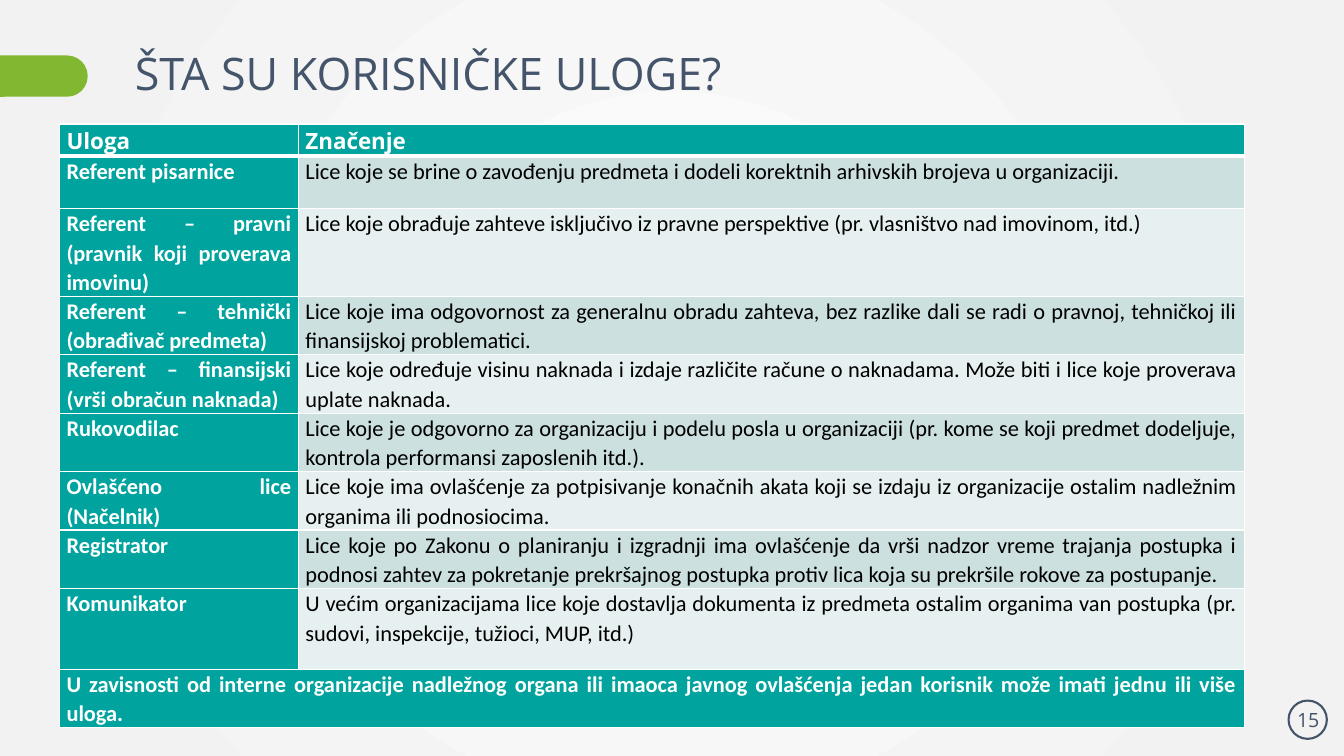
"""Builds the slide that explains the user roles in a table."""
from lxml.etree import SubElement
from pptx import Presentation
from pptx.dml.color import RGBColor
from pptx.enum.shapes import MSO_SHAPE
from pptx.enum.text import MSO_ANCHOR, PP_ALIGN
from pptx.oxml import parse_xml
from pptx.oxml.ns import nsdecls, qn
from pptx.util import Inches, Pt

TITLE = "ŠTA SU KORISNIČKE ULOGE?"
PAGE_NUMBER = "15"
HEADER = ("Uloga", "Značenje")
ROLES = [
    ("Referent pisarnice",
     "Lice koje se brine o zavođenju predmeta i dodeli korektnih arhivskih brojeva u organizaciji."),
    ("Referent – pravni (pravnik koji proverava imovinu)",
     "Lice koje obrađuje zahteve isključivo iz pravne perspektive (pr. vlasništvo nad imovinom, itd.)"),
    ("Referent – tehnički (obrađivač predmeta)",
     "Lice koje ima odgovornost za generalnu obradu zahteva, bez razlike dali se radi o pravnoj, "
     "tehničkoj ili finansijskoj problematici."),
    ("Referent – finansijski (vrši obračun naknada)",
     "Lice koje određuje visinu naknada i izdaje različite račune o naknadama. "
     "Može biti i lice koje proverava uplate naknada."),
    ("Rukovodilac",
     "Lice koje je odgovorno za organizaciju i podelu posla u organizaciji (pr. kome se koji predmet "
     "dodeljuje, kontrola performansi zaposlenih itd.)."),
    ("Ovlašćeno lice (Načelnik)",
     "Lice koje ima ovlašćenje za potpisivanje konačnih akata koji se izdaju iz organizacije ostalim "
     "nadležnim organima ili podnosiocima."),
    ("Registrator",
     "Lice koje po Zakonu o planiranju i izgradnji ima ovlašćenje da vrši nadzor vreme trajanja postupka "
     "i podnosi zahtev za pokretanje prekršajnog postupka protiv lica koja su prekršile rokove za postupanje."),
    ("Komunikator",
     "U većim organizacijama lice koje dostavlja dokumenta iz predmeta ostalim organima van postupka "
     "(pr. sudovi, inspekcije, tužioci, MUP, itd.)"),
]
FOOTER = ("U zavisnosti od interne organizacije nadležnog organa ili imaoca javnog ovlašćenja "
          "jedan korisnik može imati jednu ili više uloga.")
COLUMN_WIDTHS = (2.37, 9.38)
TWO_LINES = 0.58
ROW_HEIGHTS = (0.32, 0.52, 0.87, *[TWO_LINES] * 5, 0.8, TWO_LINES)

SLATE = RGBColor(0x44, 0x54, 0x6A)
GREEN = RGBColor(0x82, 0xB7, 0x32)
TEAL = RGBColor(0x00, 0xA3, 0x9E)
BANDS = (RGBColor(0xCC, 0xE0, 0xDF), RGBColor(0xE7, 0xF0, 0xF0))
WHITE = RGBColor(0xFF, 0xFF, 0xFF)
BLACK = RGBColor(0x00, 0x00, 0x00)
GLOW = ((0, RGBColor(0xFC, 0xFC, 0xFC)), (0.93, RGBColor(0xF2, 0xF2, 0xF2)))


def set_background(page):
    fill = page.background.fill
    fill.gradient()
    for stop, (position, color) in zip(fill.gradient_stops, GLOW):
        stop.position = position
        stop.color.rgb = color
    linear = page.element.find(".//" + qn("a:lin"))
    linear.getparent().replace(linear, parse_xml(
        f'<a:path {nsdecls("a")} path="circle">'
        '<a:fillToRect l="50000" t="50000" r="50000" b="50000"/></a:path>'))


def add_shape(page, kind, left, top, width, height):
    shape = page.shapes.add_shape(kind, Inches(left), Inches(top), Inches(width), Inches(height))
    shape.shadow.inherit = False
    return shape


def style(para, size, color, font="Open Sans", bold=False):
    para.font.name = font
    para.font.size = Pt(size)
    para.font.bold = bold
    para.font.color.rgb = color


def add_text(page, text, left, top, width, height, size):
    box = page.shapes.add_textbox(Inches(left), Inches(top), Inches(width), Inches(height))
    box.text_frame.word_wrap = True
    box.text_frame.vertical_anchor = MSO_ANCHOR.MIDDLE
    para = box.text_frame.paragraphs[0]
    para.text = text
    style(para, size, SLATE)
    return para


def add_borders(cell, bottom):
    properties = cell._tc.get_or_add_tcPr()
    for index, side in enumerate("LRTB"):
        width = Pt(bottom if side == "B" else 1)
        line = parse_xml(f'<a:ln{side} {nsdecls("a")} w="{width}"/>')
        SubElement(SubElement(line, qn("a:solidFill")), qn("a:srgbClr"), val=str(WHITE))
        properties.insert(index, line)


def fill_cell(cell, text, fill, color=WHITE, font="Calibri", bottom=1):
    cell.margin_left = cell.margin_right = Inches(0.07)
    cell.margin_top = cell.margin_bottom = 0
    cell.fill.solid()
    cell.fill.fore_color.rgb = fill
    para = cell.text_frame.paragraphs[0]
    para.text = text
    para.alignment = PP_ALIGN.JUSTIFY
    para.line_spacing = 1.07
    style(para, 16, color, font, bold=color == WHITE)
    add_borders(cell, bottom)


def add_roles(page):
    table = page.shapes.add_table(
        len(ROW_HEIGHTS), len(COLUMN_WIDTHS), Inches(0.59), Inches(1.23),
        Inches(sum(COLUMN_WIDTHS)), Inches(sum(ROW_HEIGHTS))).table
    for column, width in zip(table.columns, COLUMN_WIDTHS):
        column.width = Inches(width)
    for row, height in zip(table.rows, ROW_HEIGHTS):
        row.height = Inches(height)
    for index, heading in enumerate(HEADER):
        fill_cell(table.cell(0, index), heading, TEAL, font="Open Sans", bottom=3)
    for index, (role, meaning) in enumerate(ROLES):
        fill_cell(table.cell(index + 1, 0), role, TEAL)
        fill_cell(table.cell(index + 1, 1), meaning, BANDS[index % 2], BLACK)
    last = len(ROW_HEIGHTS) - 1
    table.cell(last, 0).merge(table.cell(last, 1))
    fill_cell(table.cell(last, 0), FOOTER, TEAL)


def main():
    deck = Presentation()
    deck.slide_width, deck.slide_height = Inches(13.33), Inches(7.5)
    page = deck.slides.add_slide(deck.slide_layouts[6])
    set_background(page)

    ring = add_shape(page, MSO_SHAPE.OVAL, 12.78, 6.95, 0.38, 0.38)
    ring.fill.background()
    ring.line.color.rgb = SLATE
    ring.line.width = Pt(1.5)

    tab = add_shape(page, MSO_SHAPE.ROUND_2_SAME_RECTANGLE, 0.23, 0.32, 0.41, 0.87)
    tab.adjustments[0] = 0.5
    tab.adjustments[1] = 0
    tab.rotation = 90
    tab.fill.solid()
    tab.fill.fore_color.rgb = GREEN
    tab.line.fill.background()

    add_text(page, TITLE, 1.24, 0.14, 10.86, 1.23, 32).line_spacing = 0.9
    add_text(page, PAGE_NUMBER, 12.75, 6.94, 0.45, 0.4, 14).alignment = PP_ALIGN.CENTER
    add_roles(page)
    deck.save("out.pptx")


if __name__ == "__main__":
    main()
